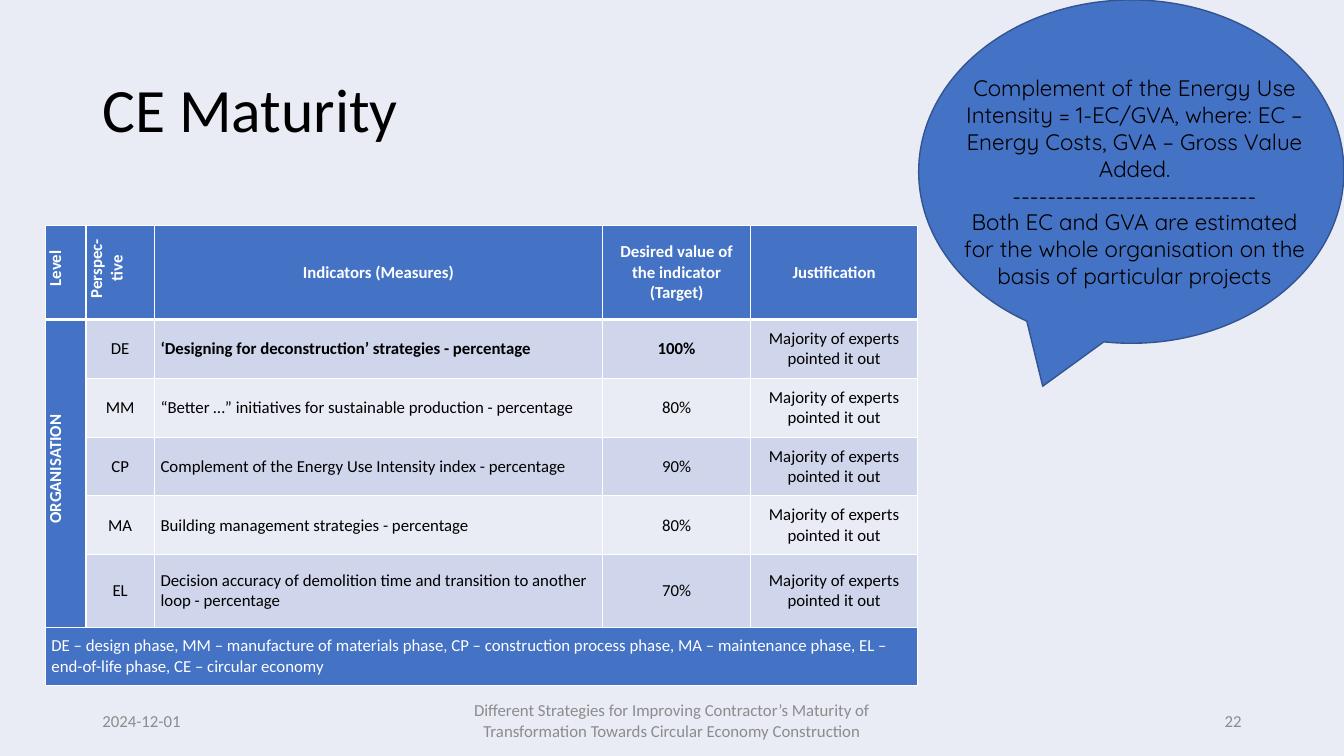
from lxml import etree
from pptx import Presentation
from pptx.dml.color import RGBColor
from pptx.enum.shapes import MSO_SHAPE
from pptx.enum.text import MSO_ANCHOR as ANCHOR, MSO_AUTO_SIZE as FIT, PP_ALIGN as ALIGN
from pptx.oxml import parse_xml
from pptx.oxml.ns import nsdecls, qn
from pptx.util import Emu, Pt

BLUE, BAND, PALE = "4472C4", "CFD5EA", "E9EBF5"
WHITE, BLACK, GREY, OUTLINE = "FFFFFF", "000000", "8C8C8C", "325491"

HEADER = ["Level", "Perspec-tive", "Indicators (Measures)",
          "Desired value of the indicator (Target)", "Justification"]
INDICATORS = [
    ("DE", "‘Designing for deconstruction’ strategies - percentage", "100%"),
    ("MM", "“Better …” initiatives for sustainable production - percentage", "80%"),
    ("CP", "Complement of the Energy Use Intensity index - percentage", "90%"),
    ("MA", "Building management strategies - percentage", "80%"),
    ("EL", "Decision accuracy of demolition time and transition to another "
           "loop - percentage", "70%"),
]
JUSTIFICATION = "Majority of experts pointed it out"
LEGEND = ("DE – design phase, MM – manufacture of materials phase, CP – construction "
          "process phase, MA – maintenance phase, EL – end-of-life phase, "
          "CE – circular economy")
COL_WIDTHS = [39, 65, 427, 141, 159]
ROW_HEIGHTS = [83, 56, 56, 56, 56, 69, 56]
NOTE = [
    "Complement of the Energy Use Intensity = 1-EC/GVA, where: EC – Energy Costs, "
    "GVA – Gross Value Added.",
    "-" * 28,
    "Both EC and GVA are estimated for the whole organisation on the basis of "
    "particular projects",
]


def px(n):
    return Emu(n * 9525)


def rgb(value):
    return RGBColor.from_string(value)


def add_run(p, text, size, color, font="Calibri", bold=False):
    r = p.add_run()
    r.text = text
    r.font.size, r.font.name, r.font.bold = Pt(size), font, bold
    r.font.color.rgb = rgb(color)


def add_text(slide, box, lines, size, color, font="Calibri",
             align=ALIGN.LEFT, anchor=ANCHOR.MIDDLE):
    tf = slide.shapes.add_textbox(*map(px, box)).text_frame
    tf.word_wrap, tf.vertical_anchor = True, anchor
    for i, line in enumerate(lines):
        p = tf.add_paragraph() if i else tf.paragraphs[0]
        p.alignment = align
        add_run(p, line, size, color, font)
    return tf


def add_title(slide, box):
    tf = add_text(slide, box, ["CE Maturity"], 44, BLACK)
    tf.paragraphs[0].line_spacing = 0.9


def add_footer(slide, box):
    left, top, width, height = box
    side = 288
    middle = width - 2 * (side + 48)
    add_text(slide, (left, top, side, height), ["2024-12-01"], 12, GREY)
    add_text(slide, (left + side + 48, top, middle, height),
             ["Different Strategies for Improving Contractor’s Maturity of "
              "Transformation Towards Circular Economy Construction"],
             12, GREY, align=ALIGN.CENTER)
    add_text(slide, (left + width - side, top, side, height), ["22"], 12, GREY,
             align=ALIGN.RIGHT)


def style_cell(cell, fill, top=1, bottom=1):
    tcPr = cell._tc.get_or_add_tcPr()
    for side, width in (("L", 1), ("R", 1), ("T", top), ("B", bottom)):
        tcPr.append(parse_xml(
            f'<a:ln{side} {nsdecls("a")} w="{Pt(width)}"><a:solidFill>'
            f'<a:srgbClr val="{WHITE}"/></a:solidFill></a:ln{side}>'))
    cell.fill.solid()
    cell.fill.fore_color.rgb = rgb(fill)
    cell.margin_left = cell.margin_right = px(6)
    cell.margin_top = cell.margin_bottom = 0
    cell.vertical_anchor = ANCHOR.MIDDLE


def write_cell(cell, text, color=BLACK, bold=False, align=ALIGN.CENTER):
    p = cell.text_frame.paragraphs[0]
    p.alignment = align
    add_run(p, text, 12, color, bold=bold)


def turn_cell(cell):
    cell._tc.get_or_add_tcPr().set("vert", "vert270")
    cell.text_frame.paragraphs[0]._p.get_or_add_pPr().set("marL", str(px(8)))


def add_indicator_table(slide, left, top):
    rows, cols = len(ROW_HEIGHTS), len(COL_WIDTHS)
    table = slide.shapes.add_table(rows, cols, px(left), px(top), px(sum(COL_WIDTHS)),
                                   px(sum(ROW_HEIGHTS))).table
    for col, width in zip(table.columns, COL_WIDTHS):
        col.width = px(width)
    for row, height in zip(table.rows, ROW_HEIGHTS):
        row.height = px(height)

    # Fills and borders
    for r in range(rows):
        for c in range(cols):
            solid = r in (0, rows - 1) or c == 0
            fill = BLUE if solid else BAND if r % 2 else PALE
            style_cell(table.cell(r, c), fill, 3 if r == 1 else 1, 3 if r == 0 else 1)

    # Header row
    for c, text in enumerate(HEADER):
        write_cell(table.cell(0, c), text, WHITE, True)

    # Level column
    level = table.cell(1, 0)
    level.merge(table.cell(rows - 2, 0))
    write_cell(level, "ORGANISATION", WHITE, True)
    for cell in (table.cell(0, 0), table.cell(0, 1), level):
        turn_cell(cell)
    table.cell(0, 0).vertical_anchor = level.vertical_anchor = ANCHOR.TOP

    # Indicator rows, the first one emphasised
    for r, (phase, indicator, target) in enumerate(INDICATORS, 1):
        write_cell(table.cell(r, 1), phase)
        write_cell(table.cell(r, 2), indicator, bold=r == 1, align=ALIGN.LEFT)
        write_cell(table.cell(r, 3), target, bold=r == 1)
        write_cell(table.cell(r, 4), JUSTIFICATION)

    # Legend row
    legend = table.cell(rows - 1, 0)
    legend.merge(table.cell(rows - 1, cols - 1))
    write_cell(legend, LEGEND, WHITE, align=ALIGN.LEFT)


def add_callout(slide, box):
    left, top, width, height = box
    sp = slide.shapes.add_shape(MSO_SHAPE.OVAL_CALLOUT, *map(px, box))
    sp.shadow.inherit = False
    sp.fill.solid()
    sp.fill.fore_color.rgb = rgb(BLUE)
    sp.line.color.rgb = rgb(OUTLINE)
    sp.line.width = Pt(1)
    tf = add_text(slide, (left + 29, top + 66, 353, 242), NOTE, 16, BLACK,
                  "Quicksand", ALIGN.CENTER, ANCHOR.TOP)
    tf.auto_size = FIT.SHAPE_TO_FIT_TEXT


def main():
    prs = Presentation()
    prs.slide_width, prs.slide_height = px(1280), px(720)
    slide = prs.slides.add_slide(prs.slide_layouts[6])
    slide.background.fill.solid()
    slide.background.fill.fore_color.rgb = rgb(PALE)
    add_title(slide, (88, 38, 1104, 139))
    add_footer(slide, (88, 667, 1104, 38))
    add_indicator_table(slide, 43, 215)
    add_callout(slide, (875, 0, 405, 327))
    prs.save("out.pptx")


if __name__ == "__main__":
    main()
